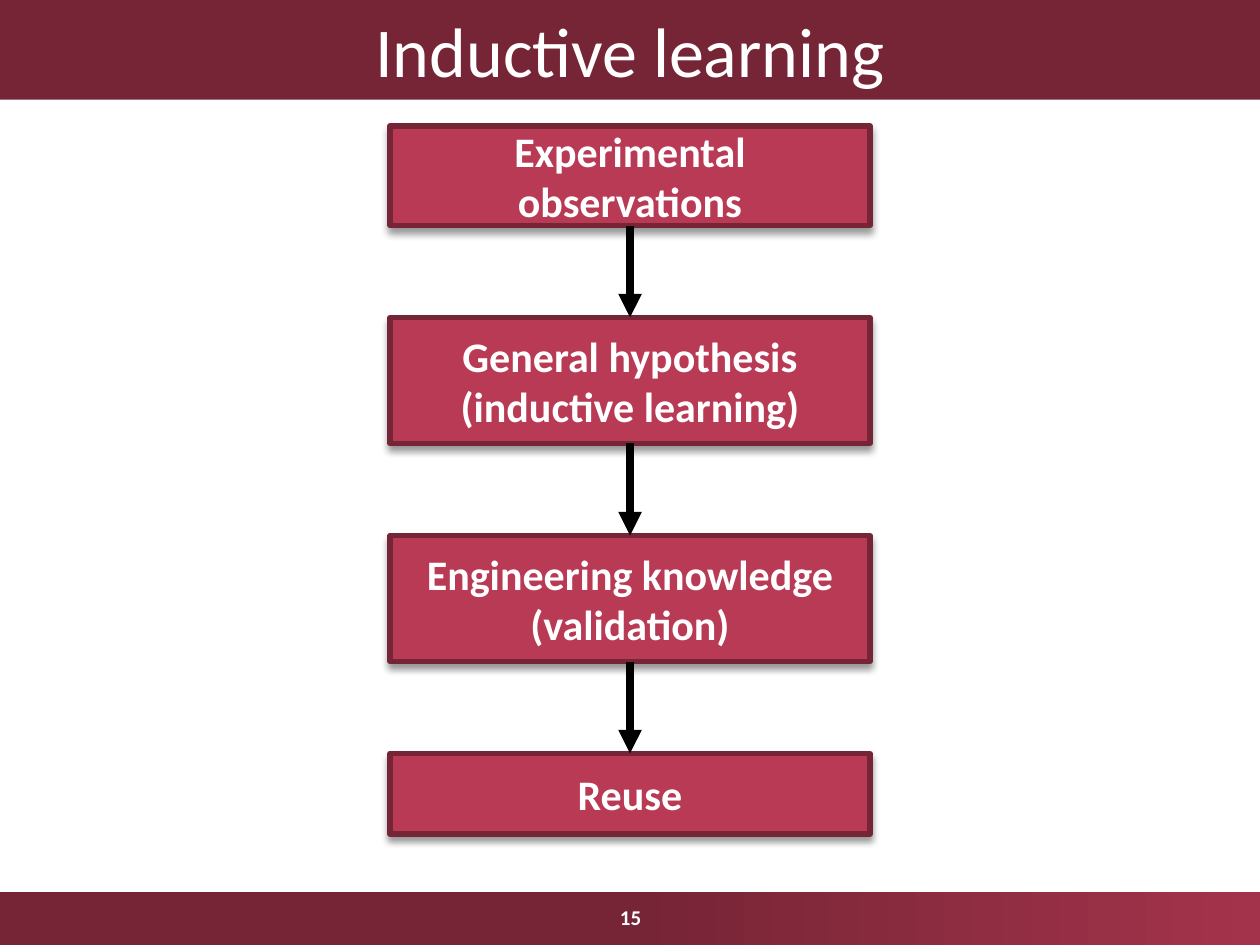
import pptx
import pptx.dml.color
import pptx.enum.shapes
import pptx.enum.text
import pptx.oxml
import pptx.oxml.ns
import pptx.util
from dataclasses import dataclass
from itertools import pairwise

Inches = pptx.util.Inches
Pt = pptx.util.Pt
NAMESPACE = pptx.oxml.ns.nsdecls("a")


@dataclass(frozen=True)
class Theme:
    font: str = "Calibri"
    dark: str = "762536"
    accent: str = "A3334B"
    box: str = "B83A55"
    text: str = "FFFFFF"
    arrow: str = "000000"
    shadow: str = "000000"
    title_size: int = 40
    box_size: int = 24
    number_size: int = 12


def rgb(value):
    return pptx.dml.color.RGBColor.from_string(value)


class SlideBuilder:
    def __init__(self, slide, theme):
        self.slide = slide
        self.theme = theme

    def add_text(self, shape, lines, size, bold=False):
        """Centre the lines in the shape as one paragraph with line breaks."""
        frame = shape.text_frame
        frame.word_wrap = True
        frame.vertical_anchor = pptx.enum.text.MSO_ANCHOR.MIDDLE
        paragraph = frame.paragraphs[0]
        paragraph.alignment = pptx.enum.text.PP_ALIGN.CENTER
        for index, line in enumerate(lines):
            if index:
                paragraph.add_line_break()
            run = paragraph.add_run()
            run.text = line
            run.font.name = self.theme.font
            run.font.size = Pt(size)
            run.font.bold = bold
            run.font.color.rgb = rgb(self.theme.text)

    def rectangle(self, left, top, width, height, color):
        shape = self.slide.shapes.add_shape(
            pptx.enum.shapes.MSO_SHAPE.RECTANGLE,
            Inches(left), Inches(top), Inches(width), Inches(height))
        shape.shadow.inherit = False
        shape.fill.solid()
        shape.fill.fore_color.rgb = rgb(color)
        shape.line.fill.background()
        return shape

    def title_bar(self, title, height):
        bar = self.rectangle(0, 0, 10, height, self.theme.dark)
        self.add_text(bar, [title], self.theme.title_size)

    def footer_bar(self, top, height):
        fill = self.rectangle(0, top, 10, height, self.theme.dark).fill
        fill.gradient()
        fill.gradient_angle = 0
        stops = zip(fill.gradient_stops, (0.5, 1), (self.theme.dark, self.theme.accent))
        for stop, position, color in stops:
            stop.position = position
            stop.color.rgb = rgb(color)

    def page_number(self, number, left, top, width, height):
        box = self.slide.shapes.add_textbox(
            Inches(left), Inches(top), Inches(width), Inches(height))
        self.add_text(box, [number], self.theme.number_size, bold=True)

    def step(self, lines, left, top, width, height):
        shape = self.rectangle(left, top, width, height, self.theme.box)
        shape.line.color.rgb = rgb(self.theme.dark)
        shape.line.width = Pt(3)
        effects = shape._element.spPr.find(pptx.oxml.ns.qn("a:effectLst"))
        effects.append(pptx.oxml.parse_xml(
            f'<a:outerShdw {NAMESPACE} blurRad="{Pt(4)}" dist="{Pt(3)}" dir="5400000"'
            f' rotWithShape="0"><a:srgbClr val="{self.theme.shadow}">'
            '<a:alpha val="40000"/></a:srgbClr></a:outerShdw>'))
        self.add_text(shape, lines, self.theme.box_size, bold=True)
        return shape

    def arrow(self, upper, lower):
        """Join the bottom of the upper box to the top of the lower one."""
        connector = self.slide.shapes.add_connector(
            pptx.enum.shapes.MSO_CONNECTOR.STRAIGHT, 0, 0, 0, 0)
        connector.begin_connect(upper, 2)
        connector.end_connect(lower, 0)
        connector.line.color.rgb = rgb(self.theme.arrow)
        connector.line.width = Pt(4.5)
        properties = connector._element.spPr
        line = properties.find(pptx.oxml.ns.qn("a:ln"))
        line.append(pptx.oxml.parse_xml(f'<a:tailEnd {NAMESPACE} type="triangle"/>'))
        properties.append(pptx.oxml.parse_xml(f"<a:effectLst {NAMESPACE}/>"))


STEPS = [
    (["Experimental observations"], 0.79),
    (["General hypothesis", "(inductive learning)"], 1),
    (["Engineering knowledge", "(validation)"], 1),
    (["Reuse"], 0.64),
]
STEP_WIDTH = 3.81
STEP_GAP = 0.73


def main():
    presentation = pptx.Presentation()
    presentation.slide_width = Inches(10)
    presentation.slide_height = Inches(7.5)
    slide = presentation.slides.add_slide(presentation.slide_layouts[6])
    builder = SlideBuilder(slide, Theme())

    builder.footer_bar(7.08, 0.42)
    builder.title_bar("Inductive learning", 0.79)
    builder.page_number("15", 3.88, 7.08, 2.25, 0.4)

    boxes = []
    top = 1
    for lines, height in STEPS:
        boxes.append(builder.step(lines, (10 - STEP_WIDTH) / 2, top, STEP_WIDTH, height))
        top += height + STEP_GAP
    for upper, lower in pairwise(boxes):
        builder.arrow(upper, lower)

    presentation.save("out.pptx")


if __name__ == "__main__":
    main()
